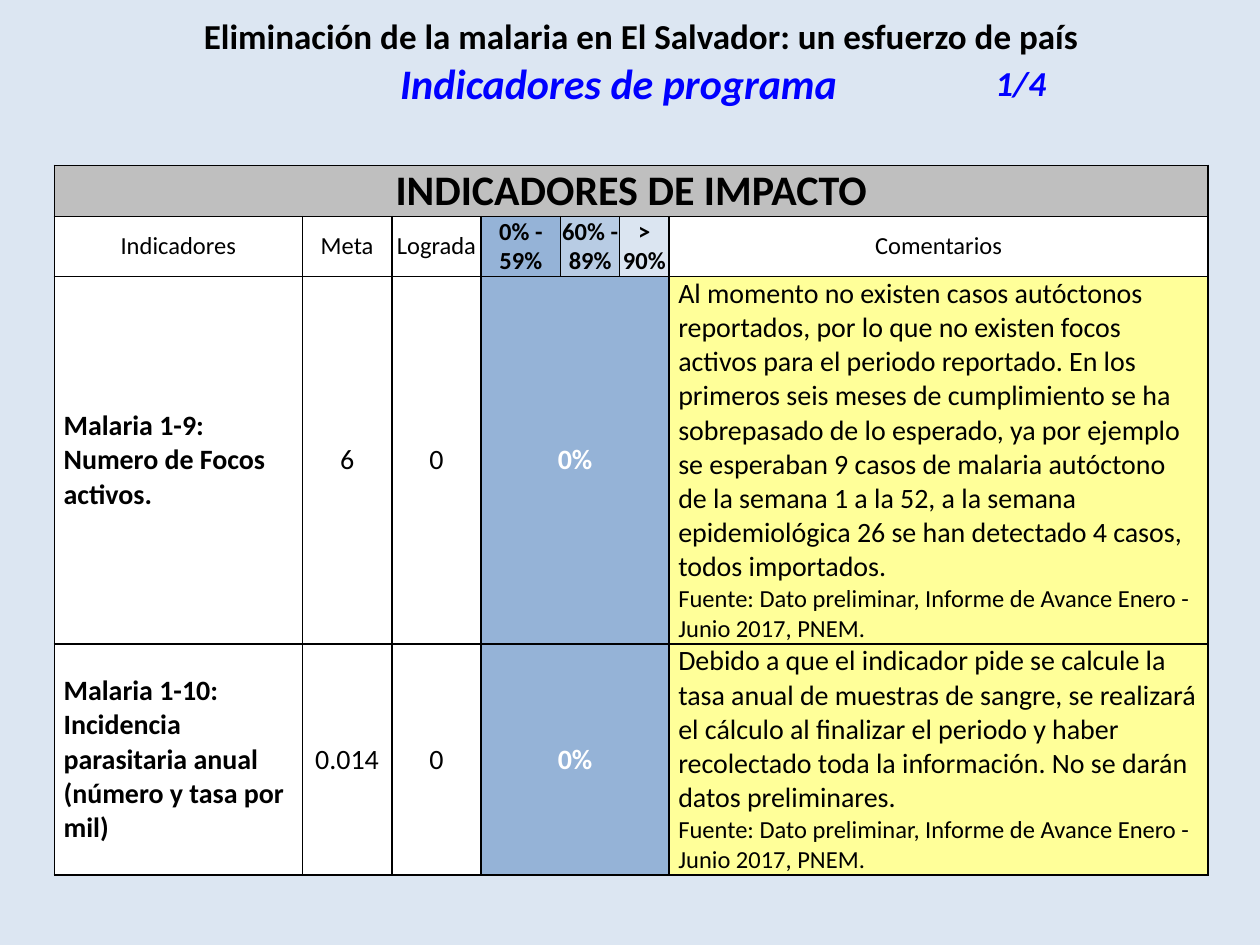
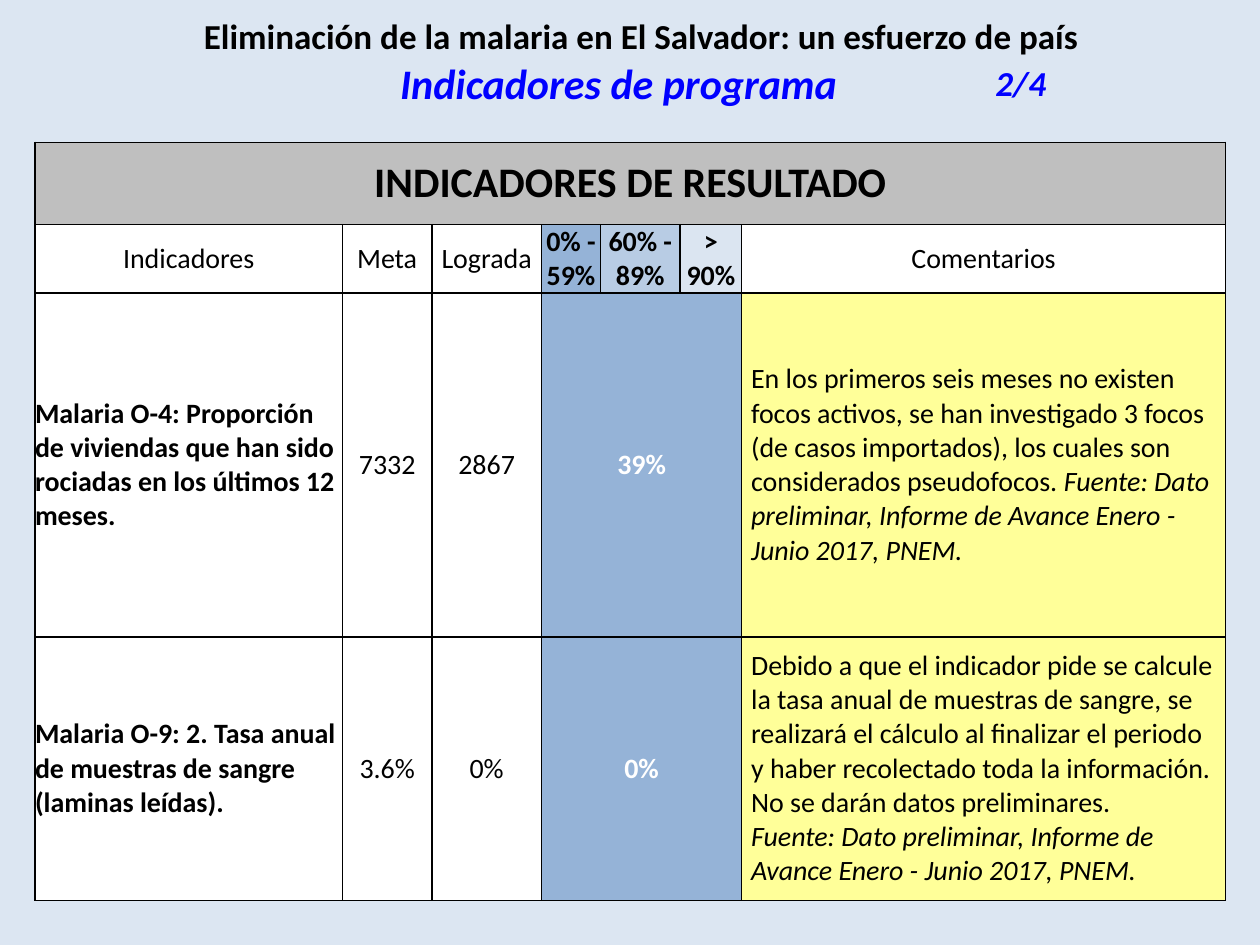
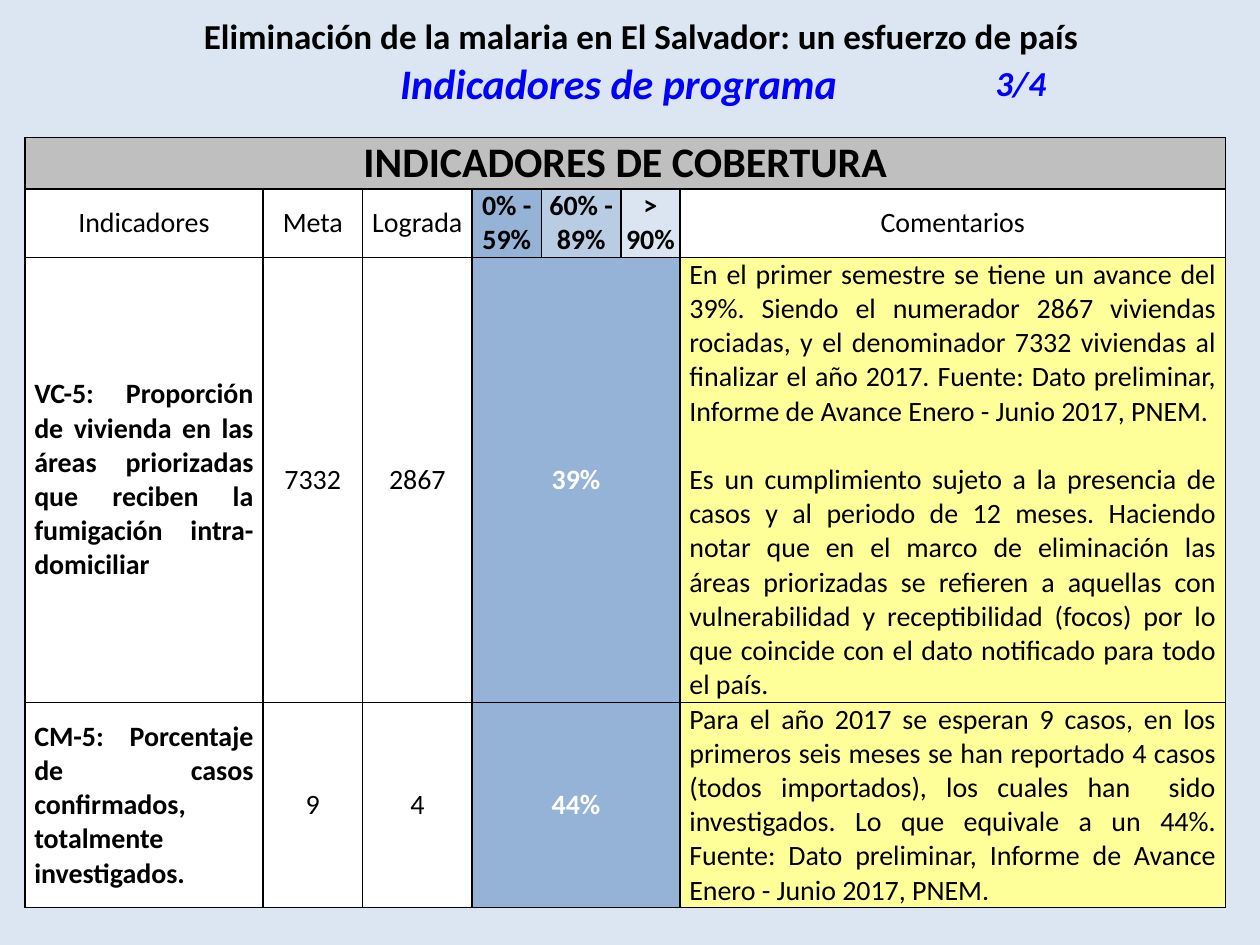
from dataclasses import dataclass
from typing import NamedTuple

from lxml.etree import SubElement
from pptx import Presentation
from pptx.dml.color import RGBColor as RGB
from pptx.enum.text import MSO_ANCHOR as ANCHOR, PP_ALIGN as ALIGN
from pptx.oxml.ns import qn
from pptx.util import Pt


@dataclass(frozen=True)
class Theme:
    """Colours, type sizes and measures shared by all slides."""
    font: str = "Calibri"
    black: str = "000000"
    white: str = "FFFFFF"
    blue: str = "0000FF"
    background: str = "DCE6F2"
    band: str = "BFBFBF"
    comment: str = "FFFF99"
    low: str = "95B3D7"
    middle: str = "B8CCE4"
    high: str = "DBE5F1"
    heading: int = 24
    title: int = 20
    body: int = 16
    small: int = 14
    inset: float = 5.4
    border: float = 1


T = Theme()
NO_STYLE = "{2D5ABB26-0587-4C30-8999-92F81FD0307C}"
SOURCE = "Fuente: Dato preliminar, Informe de Avance Enero - Junio 2017, PNEM."
PENDING = ("Debido a que el indicador pide se calcule la tasa anual de muestras de sangre, "
           "se realizará el cálculo al finalizar el periodo y haber recolectado toda la "
           "información. No se darán datos preliminares.")
HEADERS = [("Indicadores", T.white), ("Meta", T.white), ("Lograda", T.white),
           ("0% - 59%", T.low), ("60% - 89%", T.middle), ("> 90%", T.high),
           ("Comentarios", T.white)]


class Para(NamedTuple):
    """A paragraph, with an optional italic ending."""
    text: str
    size: int = T.body
    bold: bool = False
    italic: bool = False
    color: str = T.black
    align: ALIGN = ALIGN.LEFT
    before: float = 0
    tail: str = ""


class Indicator(NamedTuple):
    """One row of an indicator table."""
    name: str
    goal: str
    reached: str
    share: str
    comments: list


class Section(NamedTuple):
    """The content and measures of one slide."""
    title: str
    left: float
    top: float
    cols: list
    rows: list
    indicators: list
    header_size: int = T.body
    name_inset: float = T.inset
    align: ALIGN = ALIGN.LEFT


def add_plain_table(s, left, top, cols, rows):
    """Add a table without style, sized by its columns and rows."""
    frame = s.shapes.add_table(len(rows), len(cols), Pt(left), Pt(top),
                               Pt(sum(cols)), Pt(sum(rows)))
    table = frame.table
    table.first_row = table.horz_banding = False
    table._tbl.tblPr.find(qn("a:tableStyleId")).text = NO_STYLE
    for col, width in zip(table.columns, cols):
        col.width = Pt(width)
    for row, height in zip(table.rows, rows):
        row.height = Pt(height)
    for cell in table.iter_cells():
        cell.margin_left = cell.margin_right = cell.margin_top = cell.margin_bottom = 0
    return table


def add_borders(cell):
    """Draw a black line on each side of a cell."""
    for side in ("lnL", "lnR", "lnT", "lnB"):
        ln = SubElement(cell._tc.get_or_add_tcPr(), qn(f"a:{side}"), w=str(Pt(T.border)))
        SubElement(SubElement(ln, qn("a:solidFill")), qn("a:srgbClr"), val=T.black)


def write_cell(cell, paras, fill=None, inset=0, anchor=ANCHOR.MIDDLE):
    """Fill a cell with colour and paragraphs."""
    cell.vertical_anchor = anchor
    cell.margin_left = cell.margin_right = Pt(inset)
    if fill:
        cell.fill.solid()
        cell.fill.fore_color.rgb = RGB.from_string(fill)
    else:
        cell.fill.background()
    tf = cell.text_frame
    for i, para in enumerate(paras):
        p = tf.add_paragraph() if i else tf.paragraphs[0]
        p.alignment = para.align
        p.space_before = Pt(para.before)
        p.font.name = T.font
        p.font.size = Pt(para.size)
        p.font.bold = para.bold
        p.font.color.rgb = RGB.from_string(para.color)
        p.add_run().text = para.text
        if para.tail:
            r = p.add_run()
            r.text = para.tail
            r.font.italic = True
        else:
            p.font.italic = para.italic


def add_title(s, left, top, page):
    """Add the deck title, the subtitle and the page count."""
    table = add_plain_table(s, left, top, [93.6, 430.6, 119.5], [24, 29])
    table.cell(0, 0).merge(table.cell(0, 2))
    write_cell(table.cell(0, 0),
               [Para("Eliminación de la malaria en El Salvador: un esfuerzo de país",
                     T.title, True, align=ALIGN.CENTER)], anchor=ANCHOR.BOTTOM)
    write_cell(table.cell(1, 1),
               [Para("Indicadores de programa", T.heading, True, True, T.blue, ALIGN.CENTER)],
               anchor=ANCHOR.BOTTOM)
    write_cell(table.cell(1, 2), [Para(page, T.title, True, True, T.blue)])


def add_indicators(s, section):
    """Add the table of indicators with its heading and scale."""
    table = add_plain_table(s, section.left, section.top, section.cols, section.rows)
    for cell in table.iter_cells():
        add_borders(cell)
    table.cell(0, 0).merge(table.cell(0, 6))
    write_cell(table.cell(0, 0),
               [Para(section.title, T.heading, True, align=ALIGN.CENTER)], T.band)
    for c, (label, fill) in enumerate(HEADERS):
        write_cell(table.cell(1, c), [Para(label, section.header_size, fill != T.white,
                                           align=ALIGN.CENTER)], fill)
    for n, item in enumerate(section.indicators, 2):
        table.cell(n, 3).merge(table.cell(n, 5))
        write_cell(table.cell(n, 0), [Para(item.name, bold=True, align=section.align)],
                   T.white, section.name_inset)
        for c, value in enumerate((item.goal, item.reached), 1):
            write_cell(table.cell(n, c), [Para(value, align=ALIGN.CENTER)], T.white, T.inset)
        write_cell(table.cell(n, 3),
                   [Para(item.share, bold=True, color=T.white, align=ALIGN.CENTER)],
                   T.low, T.inset)
        write_cell(table.cell(n, 6), [p._replace(align=section.align) for p in item.comments],
                   T.comment, T.inset)


SECTIONS = [
    Section(
        "INDICADORES DE IMPACTO", 31, 94.5,
        [141.8, 51.1, 51.1, 45.4, 33.8, 28.1, 308.2], [29, 34, 209, 131],
        [Indicator("Malaria 1-9: Numero de Focos activos.", "6", "0", "0%", [
            Para("Al momento no existen casos autóctonos reportados, por lo que no existen "
                 "focos activos para el periodo reportado. En los primeros seis meses de "
                 "cumplimiento se ha sobrepasado de lo esperado, ya por ejemplo se esperaban "
                 "9 casos de malaria autóctono de la semana 1 a la 52, a la semana "
                 "epidemiológica 26 se han detectado 4 casos, todos importados."),
            Para(SOURCE, T.small)]),
         Indicator("Malaria 1-10: Incidencia parasitaria anual (número y tasa por mil)",
                   "0.014", "0", "0%", [Para(PENDING), Para(SOURCE, T.small)])],
        header_size=T.small),
    Section(
        "INDICADORES DE RESULTADO", 20, 81.3,
        [175.7, 51.1, 62.6, 33.8, 45.4, 35.3, 276.5], [47, 39, 196.5, 150.5],
        [Indicator("Malaria O-4: Proporción de viviendas que han sido rociadas en los "
                   "últimos 12 meses.", "7332", "2867", "39%", [
                       Para("En los primeros seis meses no existen focos activos, se han "
                            "investigado 3 focos (de casos importados), los cuales son "
                            "considerados pseudofocos. ", tail=SOURCE)]),
         Indicator("Malaria O-9: 2. Tasa anual de muestras de sangre (laminas leídas).",
                   "3.6%", "0%", "0%", [Para(PENDING), Para(SOURCE, italic=True)])],
        name_inset=0),
    Section(
        "INDICADORES DE COBERTURA", 14.2, 78.6,
        [136.1, 56.9, 62.6, 39.6, 45.4, 33.8, 311.8], [29, 39, 254, 117],
        [Indicator("VC-5: Proporción de vivienda en las áreas priorizadas que reciben la "
                   "fumigación intra-domiciliar", "7332", "2867", "39%", [
                       Para("En el primer semestre se tiene un avance del 39%. Siendo el "
                            "numerador 2867 viviendas rociadas, y el denominador 7332 "
                            f"viviendas al finalizar el año 2017. {SOURCE}"),
                       Para("Es un cumplimiento sujeto a la presencia de casos y al periodo "
                            "de 12 meses. Haciendo notar que en el marco de eliminación las "
                            "áreas priorizadas se refieren a aquellas con vulnerabilidad y "
                            "receptibilidad (focos) por lo que coincide con el dato "
                            "notificado para todo el país.", before=19.5)]),
         Indicator("CM-5: Porcentaje de casos confirmados, totalmente investigados.",
                   "9", "4", "44%", [
                       Para("Para el año 2017 se esperan 9 casos, en los primeros seis meses "
                            "se han reportado 4 casos (todos importados), los cuales han  sido "
                            f"investigados. Lo que equivale a un 44%. {SOURCE}")])],
        align=ALIGN.JUSTIFY),
]


def main():
    """Build the three indicator slides."""
    prs = Presentation()
    prs.slide_width, prs.slide_height = Pt(720), Pt(540)
    for n, section in enumerate(SECTIONS, 1):
        s = prs.slides.add_slide(prs.slide_layouts[6])
        s.background.fill.solid()
        s.background.fill.fore_color.rgb = RGB.from_string(T.background)
        add_indicators(s, section)
        add_title(s, 44.6, 9.4, f"{n}/4")
    prs.save("out.pptx")


if __name__ == "__main__":
    main()
